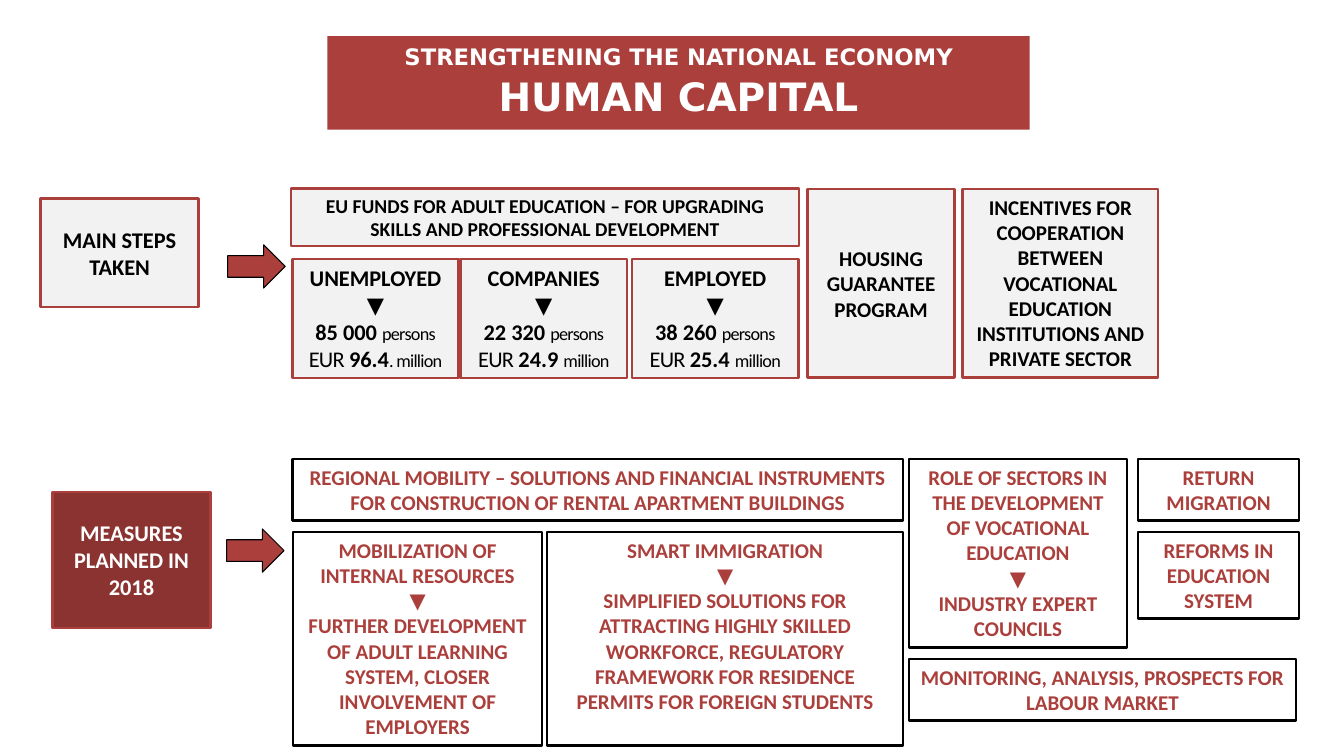
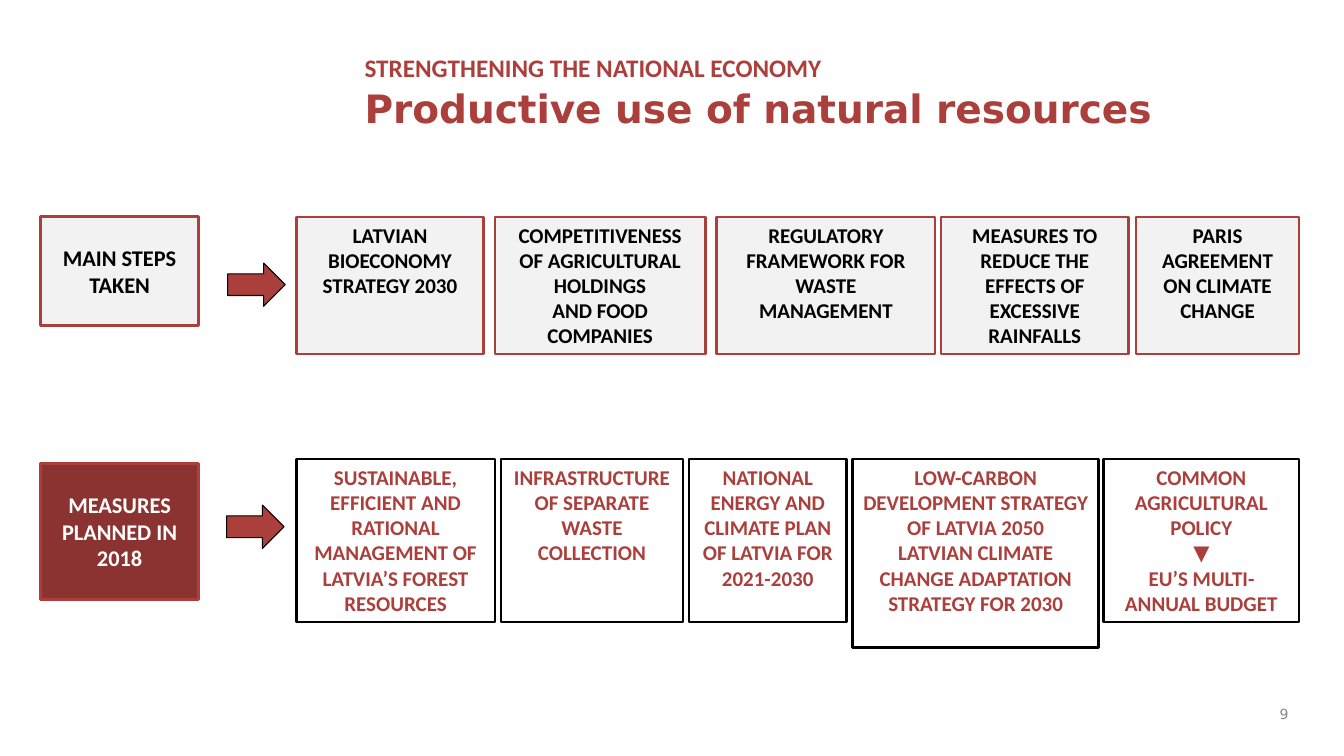
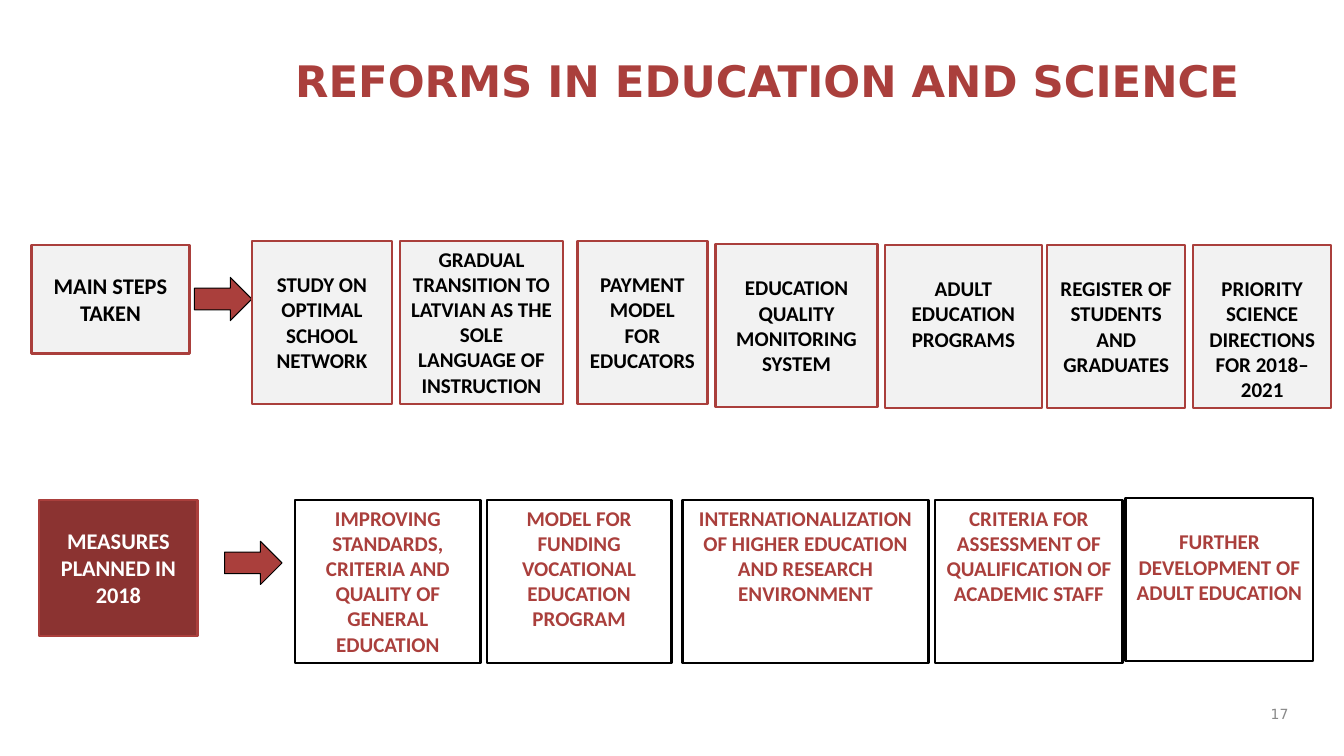
from dataclasses import dataclass
from typing import Optional, Sequence, Union

import pptx
import pptx.dml.color
import pptx.enum.shapes
import pptx.enum.text
import pptx.util

Cm = pptx.util.Cm
Pt = pptx.util.Pt
Align = pptx.enum.text.PP_ALIGN
Anchor = pptx.enum.text.MSO_ANCHOR
Preset = pptx.enum.shapes.MSO_SHAPE


@dataclass(frozen=True)
class Theme:
    red: str = "AA3F3C"
    dark_red: str = "8B3331"
    pale: str = "F2F2F2"
    white: str = "FFFFFF"
    black: str = "000000"
    grey: str = "898989"
    body_font: str = "Calibri"
    title_font: str = "DejaVu Sans"
    title_size: float = 27.9
    big_title_size: float = 31
    kicker_size: float = 16.2
    body_kicker_size: float = 18
    label_size: float = 16
    card_size: float = 15
    band_size: float = 14
    unit_size: float = 13
    page_size: float = 10
    border: float = 1.75
    arrow_border: float = 0.75


THEME = Theme()


@dataclass(frozen=True)
class Run:
    """Text with the format that differs from its paragraph; spacing is in points."""
    text: str
    size: Optional[float] = None
    bold: Optional[bool] = None
    font: Optional[str] = None
    spacing: float = 0


Paragraph = Union[str, tuple[Run, ...]]


@dataclass(frozen=True)
class Style:
    fill: str
    line: str
    color: str
    size: float


STEP = Style(THEME.pale, THEME.red, THEME.black, THEME.card_size)
STEP_BAND = Style(THEME.pale, THEME.red, THEME.black, THEME.band_size)
STEP_FIGURES = Style(THEME.pale, THEME.red, THEME.black, THEME.label_size)
MEASURE = Style(THEME.white, THEME.black, THEME.red, THEME.card_size)
MEASURE_LABEL = Style(THEME.dark_red, THEME.red, THEME.white, THEME.label_size)

SIDE_INSET, TOP_INSET = 0.25, 0.13
TITLE_INSET = 0.18
LABEL_INSET = 0.69      # first line of a row label
ONE_LINE_INSET = 0.78   # text starts one line lower
TWO_LINE_INSET = 1.42   # text starts two lines lower


@dataclass(frozen=True)
class Card:
    """A box in a row; shift moves it down and extra makes it taller, in cm."""
    left: float
    width: float
    text: tuple[Paragraph, ...]
    inset: float = TOP_INSET
    shift: float = 0
    extra: float = 0


@dataclass(frozen=True)
class Row:
    style: Style
    top: float
    height: float
    cards: tuple[Card, ...]


@dataclass(frozen=True)
class Place:
    left: float
    top: float


@dataclass(frozen=True)
class Title:
    left: float
    top: float
    width: float
    lines: tuple[Paragraph, ...]
    color: str = THEME.red
    fill: Optional[str] = None
    align: Align = Align.LEFT


@dataclass(frozen=True)
class Page:
    title: Title
    steps_label: Place
    measures_label: Place
    arrows: tuple[Place, Place]
    rows: tuple[Row, ...]
    number: Optional[str] = None


def rgb(value: str) -> pptx.dml.color.RGBColor:
    return pptx.dml.color.RGBColor.from_string(value)


def write_text(shape, paragraphs: Sequence[Paragraph], *, size: float, color: str,
               font: str = THEME.body_font, bold: bool = True,
               align: Align = Align.CENTER, anchor: Anchor = Anchor.TOP,
               top_inset: float = TOP_INSET, gap: float = 0) -> None:
    frame = shape.text_frame
    frame.word_wrap = True
    frame.vertical_anchor = anchor
    frame.margin_left = frame.margin_right = Cm(SIDE_INSET)
    frame.margin_top, frame.margin_bottom = Cm(top_inset), Cm(TOP_INSET)
    for index, content in enumerate(paragraphs):
        paragraph = frame.add_paragraph() if index else frame.paragraphs[0]
        paragraph.alignment = align
        if index and gap:
            paragraph.space_before = Pt(gap)
        for part in (Run(content),) if isinstance(content, str) else content:
            run = paragraph.add_run()
            run.text = part.text
            run.font.name = part.font or font
            run.font.size = Pt(part.size or size)
            run.font.bold = bold if part.bold is None else part.bold
            run.font.color.rgb = rgb(color)
            if part.spacing:
                run._r.get_or_add_rPr().set("spc", str(int(part.spacing * 100)))


def add_filled(slide, preset, left: float, top: float, width: float, height: float, *,
               fill: str, line: str, border: float):
    shape = slide.shapes.add_shape(preset, Cm(left), Cm(top), Cm(width), Cm(height))
    shape.shadow.inherit = False
    shape.fill.solid()
    shape.fill.fore_color.rgb = rgb(fill)
    shape.line.color.rgb = rgb(line)
    shape.line.width = Pt(border)
    return shape


def add_row(slide, row: Row) -> None:
    style = row.style
    for card in row.cards:
        shape = add_filled(slide, Preset.RECTANGLE, card.left, row.top + card.shift,
                           card.width, row.height + card.extra,
                           fill=style.fill, line=style.line, border=THEME.border)
        write_text(shape, card.text, size=style.size, color=style.color,
                   top_inset=card.inset)


def add_labels(slide, page: Page) -> None:
    """Draw the two row labels and the arrows that lead from them."""
    for style, place, height, text in (
        (STEP_FIGURES, page.steps_label, 2.74, ("MAIN STEPS TAKEN",)),
        (MEASURE_LABEL, page.measures_label, 3.43, ("MEASURES PLANNED IN", "2018")),
    ):
        label = Card(place.left, 3.99, text, LABEL_INSET)
        add_row(slide, Row(style, place.top, height, (label,)))
    for place in page.arrows:
        add_filled(slide, Preset.RIGHT_ARROW, place.left, place.top, 1.45, 1.09,
                   fill=THEME.red, line=THEME.black, border=THEME.arrow_border)


def add_title(slide, title: Title) -> None:
    shape = slide.shapes.add_textbox(Cm(title.left), Cm(title.top),
                                     Cm(title.width), Cm(2.36))
    if title.fill:
        shape.fill.solid()
        shape.fill.fore_color.rgb = rgb(title.fill)
    write_text(shape, title.lines, size=THEME.title_size, color=title.color,
               font=THEME.title_font, align=title.align, top_inset=TITLE_INSET, gap=1.5)


def add_page(presentation, page: Page) -> None:
    slide = presentation.slides.add_slide(presentation.slide_layouts[6])
    add_title(slide, page.title)
    add_labels(slide, page)
    for row in page.rows:
        add_row(slide, row)
    if page.number:
        shape = slide.shapes.add_textbox(Cm(31.6), Cm(17.58), Cm(1.12), Cm(0.84))
        write_text(shape, (page.number,), size=THEME.page_size, color=THEME.grey,
                   font=THEME.title_font, bold=False, align=Align.RIGHT,
                   anchor=Anchor.MIDDLE)


def funding(group: str, persons: str, amount: str, unit: str) -> tuple[Paragraph, ...]:
    return (
        group,
        "▼",
        (Run(persons + " "), Run("persons", THEME.unit_size, False, spacing=-0.5)),
        (Run("EUR ", bold=False, spacing=-0.5), Run(amount),
         Run(unit, THEME.unit_size, False, spacing=-0.5)),
    )


HUMAN_CAPITAL = Page(
    Title(8.25, 0.91, 17.7,
          ((Run("STRENGTHENING THE NATIONAL ECONOMY", THEME.kicker_size),),
           "HUMAN CAPITAL"),
          THEME.white, THEME.red, Align.CENTER),
    Place(1.02, 5), Place(1.32, 12.4),
    (Place(5.74, 6.17), Place(5.71, 13.33)),
    (
        Row(STEP_BAND, 4.75, 1.45, (
            Card(7.34, 12.8, ("EU FUNDS FOR ADULT EDUCATION – FOR UPGRADING "
                              "SKILLS AND PROFESSIONAL DEVELOPMENT",)),
        )),
        Row(STEP_FIGURES, 6.53, 3, (
            Card(7.37, 4.19, funding("UNEMPLOYED", "85 000", "96.4", ". million")),
            Card(11.61, 4.19, funding("COMPANIES", "22 320", "24.9 ", "million")),
            Card(15.93, 4.19, funding("EMPLOYED", "38 260", "25.4 ", "million")),
        )),
        Row(STEP, 4.77, 4.75, (
            Card(20.35, 3.71, ("HOUSING GUARANTEE PROGRAM",), TWO_LINE_INSET),
            Card(24.26, 4.93, ("INCENTIVES FOR COOPERATION BETWEEN VOCATIONAL "
                               "EDUCATION INSTITUTIONS AND PRIVATE SECTOR",)),
        )),
        Row(MEASURE, 11.57, 1.55, (
            Card(7.37, 15.39, ("REGIONAL MOBILITY – SOLUTIONS AND FINANCIAL INSTRUMENTS "
                               "FOR CONSTRUCTION OF RENTAL APARTMENT BUILDINGS",)),
            Card(22.91, 5.49, ("ROLE OF SECTORS IN THE DEVELOPMENT OF VOCATIONAL EDUCATION",
                               "▼", "INDUSTRY EXPERT COUNCILS"), extra=3.2),
            Card(28.68, 4.06, ("RETURN MIGRATION",)),
        )),
        Row(MEASURE, 13.41, 5.38, (
            Card(7.39, 6.27, ("MOBILIZATION OF INTERNAL RESOURCES", "▼",
                              "FURTHER DEVELOPMENT OF ADULT LEARNING SYSTEM, "
                              "CLOSER INVOLVEMENT OF EMPLOYERS")),
            Card(13.79, 8.97, ("SMART IMMIGRATION", "▼",
                               "SIMPLIFIED SOLUTIONS FOR ATTRACTING HIGHLY SKILLED "
                               "WORKFORCE, REGULATORY FRAMEWORK FOR RESIDENCE PERMITS "
                               "FOR FOREIGN STUDENTS")),
            Card(28.68, 4.06, ("REFORMS IN EDUCATION SYSTEM",), extra=-3.2),
        )),
        Row(MEASURE, 16.61, 1.55, (
            Card(22.91, 9.75, ("MONITORING, ANALYSIS, PROSPECTS FOR LABOUR MARKET",)),
        )),
    ),
)

NATURAL_RESOURCES = Page(
    Title(8.94, 1.14, 23.77,
          ((Run("STRENGTHENING THE NATIONAL ECONOMY", THEME.body_kicker_size,
                font=THEME.body_font),),
           "Productive use of natural resources")),
    Place(1.02, 5.46), Place(1.02, 11.68),
    (Place(5.74, 6.63), Place(5.71, 12.73)),
    (
        Row(STEP, 5.47, 3.45, (
            Card(7.47, 4.72, ("LATVIAN BIOECONOMY STRATEGY 2030",)),
            Card(12.47, 5.31, ("COMPETITIVENESS OF AGRICULTURAL HOLDINGS",
                               "AND FOOD COMPANIES")),
            Card(18.06, 5.51, ("REGULATORY FRAMEWORK FOR WASTE MANAGEMENT",)),
            Card(23.72, 4.72, ("MEASURES TO REDUCE THE EFFECTS OF EXCESSIVE RAINFALLS",)),
            Card(28.63, 4.11, ("PARIS AGREEMENT ON CLIMATE CHANGE",)),
        )),
        Row(MEASURE, 11.57, 4.11, (
            Card(7.47, 5, ("SUSTAINABLE, EFFICIENT AND RATIONAL MANAGEMENT "
                           "OF LATVIA’S FOREST RESOURCES",)),
            Card(12.62, 4.6, ("INFRASTRUCTURE OF SEPARATE WASTE COLLECTION",)),
            Card(17.37, 3.96, ("NATIONAL ENERGY AND CLIMATE PLAN OF LATVIA "
                               "FOR 2021-2030",)),
            Card(21.49, 6.2, ("LOW-CARBON DEVELOPMENT STRATEGY OF LATVIA 2050",
                              "LATVIAN CLIMATE CHANGE ADAPTATION STRATEGY FOR 2030"),
                 extra=0.64),
            Card(27.81, 4.93, ("COMMON AGRICULTURAL POLICY", "▼",
                               "EU’S MULTI-ANNUAL BUDGET")),
        )),
    ),
    "9",
)

EDUCATION_REFORMS = Page(
    Title(7.19, 1.18, 26.29,
          ((Run("REFORMS IN EDUCATION AND SCIENCE", THEME.big_title_size),),)),
    Place(0.79, 6.17), Place(0.99, 12.6),
    (Place(4.9, 6.99), Place(5.66, 13.64)),
    (
        Row(STEP, 6.07, 4.11, (
            Card(6.35, 3.53, ("STUDY ON OPTIMAL SCHOOL NETWORK",), ONE_LINE_INSET),
            Card(10.08, 4.11, ("GRADUAL TRANSITION TO LATVIAN AS THE SOLE "
                               "LANGUAGE OF INSTRUCTION",)),
            Card(14.55, 3.28, ("PAYMENT MODEL", "FOR EDUCATORS"), ONE_LINE_INSET),
            Card(18.03, 4.09, ("EDUCATION QUALITY MONITORING SYSTEM",),
                 ONE_LINE_INSET, 0.08),
            Card(22.3, 3.96, ("ADULT EDUCATION PROGRAMS",), ONE_LINE_INSET, 0.1),
            Card(26.39, 3.48, ("REGISTER OF STUDENTS AND GRADUATES",),
                 ONE_LINE_INSET, 0.1),
            Card(30.07, 3.48, ("PRIORITY SCIENCE DIRECTIONS FOR 2018–2021",),
                 ONE_LINE_INSET, 0.1),
        )),
        Row(MEASURE, 12.6, 4.11, (
            Card(7.44, 4.67, ("IMPROVING STANDARDS, CRITERIA AND QUALITY "
                              "OF GENERAL EDUCATION",)),
            Card(12.27, 4.65, ("MODEL FOR FUNDING VOCATIONAL EDUCATION PROGRAM",)),
            Card(17.2, 6.2, ("INTERNATIONALIZATION OF HIGHER EDUCATION "
                             "AND RESEARCH ENVIRONMENT",)),
            Card(23.57, 4.72, ("CRITERIA FOR ASSESSMENT OF QUALIFICATION "
                               "OF ACADEMIC STAFF",)),
            Card(28.37, 4.72, ("FURTHER DEVELOPMENT OF ADULT EDUCATION",),
                 ONE_LINE_INSET, -0.05),
        )),
    ),
    "17",
)


def main() -> None:
    presentation = pptx.Presentation()
    presentation.slide_width, presentation.slide_height = Cm(33.87), Cm(19.05)
    for page in (HUMAN_CAPITAL, NATURAL_RESOURCES, EDUCATION_REFORMS):
        add_page(presentation, page)
    presentation.save("out.pptx")


if __name__ == "__main__":
    main()
